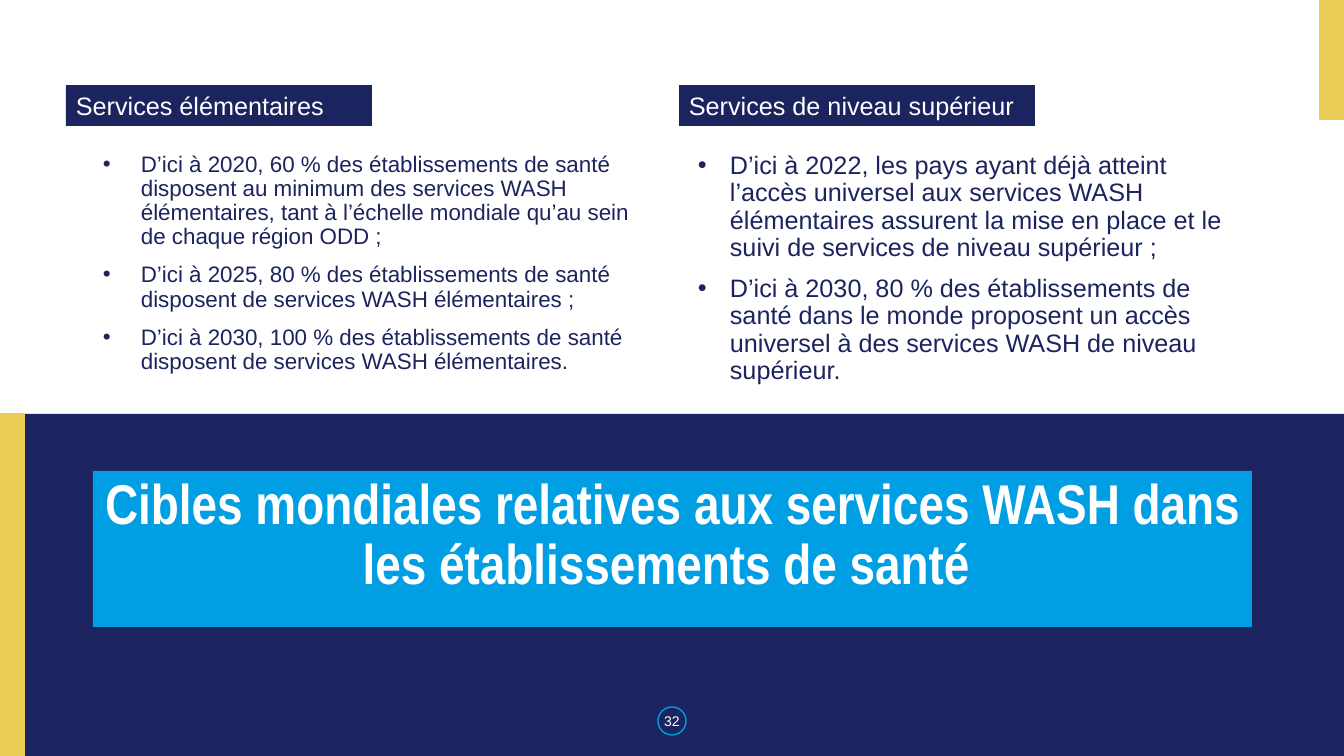
"""Build the slide on global WASH targets in health care facilities."""
from lxml import etree
from pptx import Presentation
from pptx.dml.color import RGBColor
from pptx.enum.shapes import MSO_SHAPE
from pptx.enum.text import MSO_ANCHOR, PP_ALIGN
from pptx.oxml.ns import qn
from pptx.util import Emu, Pt

RECTANGLE, OVAL = MSO_SHAPE.RECTANGLE, MSO_SHAPE.OVAL
TOP, MIDDLE = MSO_ANCHOR.TOP, MSO_ANCHOR.MIDDLE
LEFT, CENTER = PP_ALIGN.LEFT, PP_ALIGN.CENTER

NAVY = RGBColor(0x1C, 0x24, 0x5F)
GOLD = RGBColor(0xEA, 0xCD, 0x54)
BLUE = RGBColor(0x00, 0x9E, 0xE3)
WHITE = RGBColor(0xFF, 0xFF, 0xFF)

TITLE = "Cibles mondiales relatives aux services WASH dans les établissements de santé "
PAGE_NUMBER = "32"
COLUMNS = [
    {
        "heading": "Services élémentaires", "heading_left": 66, "heading_width": 306,
        "body_left": 93, "body_width": 559, "size": 16, "indent": 38,
        "targets": [
            "D’ici à 2020, 60 % des établissements de santé disposent au minimum des "
            "services WASH élémentaires, tant à l’échelle mondiale qu’au sein de chaque "
            "région ODD ;",
            "D’ici à 2025, 80 % des établissements de santé disposent de "
            "services WASH élémentaires ;",
            "D’ici à 2030, 100 % des établissements de santé disposent de "
            "services WASH élémentaires.",
        ],
    },
    {
        "heading": "Services de niveau supérieur", "heading_left": 679, "heading_width": 356,
        "body_left": 688, "body_width": 563, "size": 18, "indent": 32,
        "targets": [
            "D’ici à 2022, les pays ayant déjà atteint l’accès universel aux "
            "services WASH élémentaires assurent la mise en place et le suivi de "
            "services de niveau supérieur ;",
            "D’ici à 2030, 80 % des établissements de santé dans le monde proposent "
            "un accès universel à des services WASH de niveau supérieur.",
        ],
    },
]

SLIDE_WIDTH, SLIDE_HEIGHT = 1344, 756
BAND_TOP, STRIPE_WIDTH, CORNER_HEIGHT = 414, 24, 119
BAND_HEIGHT = SLIDE_HEIGHT - BAND_TOP
HEADING_TOP, HEADING_HEIGHT = 85, 41
BODY_TOP, BODY_HEIGHT = 148, 247
TITLE_BOX = (93, 471, 1159, 156)
NUMBER_TOP, NUMBER_HEIGHT, RING_SIZE = 701, 40, 28


def px(length):
    """Turn a length in px into EMU."""
    return Emu(round(length * 914400 / 100.8))


def add_block(slide, box, kind=RECTANGLE, fill=None, line=None):
    """Add a preset shape with an optional fill and outline."""
    shape = slide.shapes.add_shape(kind, *map(px, box))
    shape.shadow.inherit = False
    if fill is None:
        shape.fill.background()
    else:
        shape.fill.solid()
        shape.fill.fore_color.rgb = fill
    if line is None:
        shape.line.fill.background()
    else:
        shape.line.color.rgb = line
        shape.line.width = Pt(1)
    return shape


def add_bullet(paragraph, indent, color):
    """Give a paragraph a hanging round bullet."""
    properties = paragraph._p.get_or_add_pPr()
    properties.set("marL", str(px(indent)))
    properties.set("indent", str(-px(indent)))
    bullet_color = etree.SubElement(properties, qn("a:buClr"))
    etree.SubElement(bullet_color, qn("a:srgbClr"), val=str(color))
    etree.SubElement(properties, qn("a:buFont"), typeface="Arial")
    etree.SubElement(properties, qn("a:buChar"), char="•")


def write_text(shape, texts, size=18, font="Arial", color=WHITE, bold=False,
               align=LEFT, anchor=TOP, line_spacing=1.0, space_before=0, indent=None):
    """Fill a shape with one formatted paragraph per text."""
    frame = shape.text_frame
    frame.word_wrap = True
    frame.vertical_anchor = anchor
    for index, text in enumerate(texts):
        paragraph = frame.add_paragraph() if index else frame.paragraphs[0]
        paragraph.alignment = align
        paragraph.line_spacing = line_spacing
        paragraph.space_before = Pt(space_before if index else 0)
        if indent is not None:
            add_bullet(paragraph, indent, color)
        run = paragraph.add_run()
        run.text = text
        run.font.name = font
        run.font.size = Pt(size)
        run.font.bold = bold
        run.font.color.rgb = color


def main():
    """Compose and save the slide."""
    presentation = Presentation()
    presentation.slide_width = px(SLIDE_WIDTH)
    presentation.slide_height = px(SLIDE_HEIGHT)
    slide = presentation.slides.add_slide(presentation.slide_layouts[6])

    add_block(slide, (STRIPE_WIDTH, BAND_TOP, SLIDE_WIDTH - STRIPE_WIDTH, BAND_HEIGHT),
              fill=NAVY)
    add_block(slide, (0, BAND_TOP, STRIPE_WIDTH, BAND_HEIGHT), fill=GOLD, line=GOLD)
    add_block(slide, (SLIDE_WIDTH - STRIPE_WIDTH, 0, STRIPE_WIDTH, CORNER_HEIGHT),
              fill=GOLD, line=GOLD)

    ring_left = (SLIDE_WIDTH - RING_SIZE) / 2
    ring_top = NUMBER_TOP + (NUMBER_HEIGHT - RING_SIZE) / 2
    add_block(slide, (ring_left, ring_top, RING_SIZE, RING_SIZE), kind=OVAL, line=BLUE)
    number = slide.shapes.add_textbox(
        *map(px, (0, NUMBER_TOP, SLIDE_WIDTH, NUMBER_HEIGHT)))
    write_text(number, [PAGE_NUMBER], size=10, align=CENTER, anchor=MIDDLE)

    title = add_block(slide, TITLE_BOX, fill=BLUE)
    write_text(title, [TITLE], size=40, font="Arial Narrow", bold=True,
               align=CENTER, line_spacing=0.9)

    for column in COLUMNS:
        heading_box = (column["heading_left"], HEADING_TOP,
                       column["heading_width"], HEADING_HEIGHT)
        heading = add_block(slide, heading_box, fill=NAVY)
        write_text(heading, [column["heading"]])
        body = slide.shapes.add_textbox(
            *map(px, (column["body_left"], BODY_TOP, column["body_width"], BODY_HEIGHT)))
        write_text(body, column["targets"], size=column["size"], color=NAVY,
                   line_spacing=0.9, space_before=10, indent=column["indent"])

    presentation.save("out.pptx")


if __name__ == "__main__":
    main()
